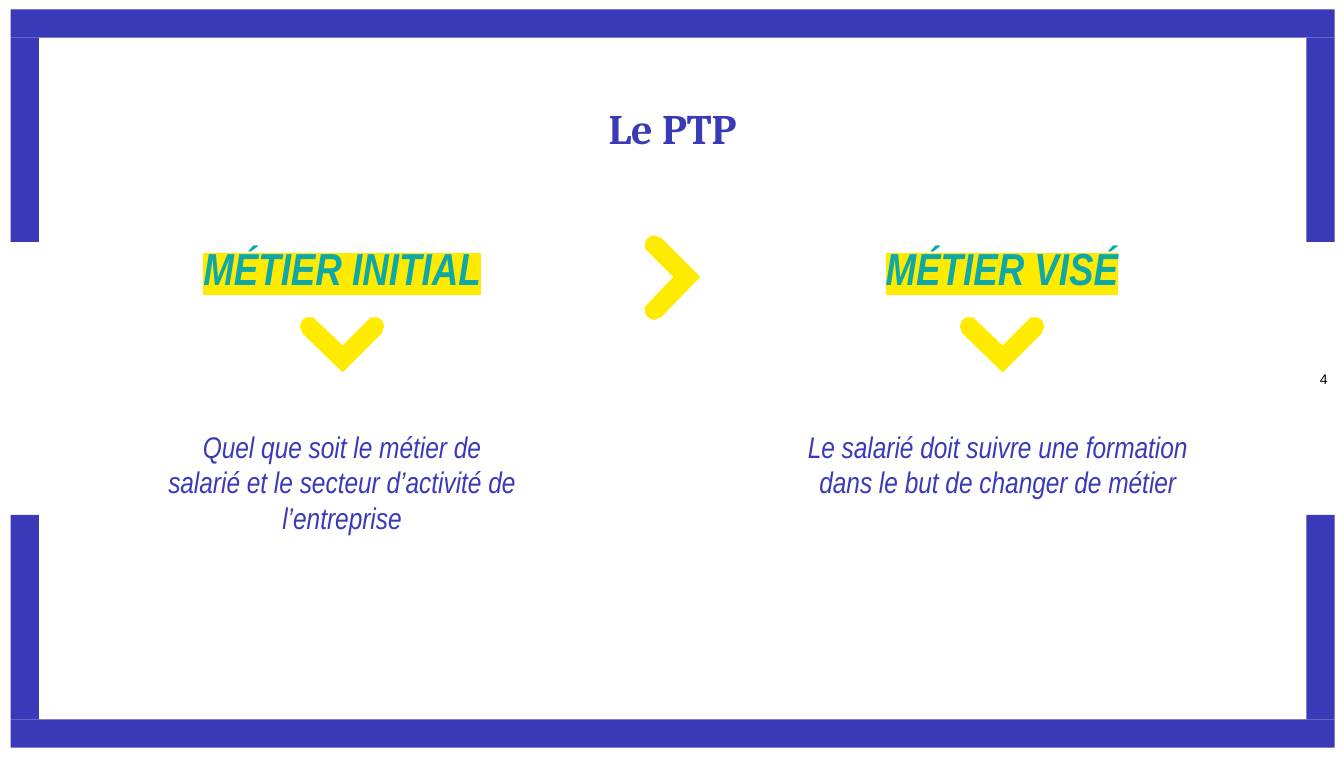
import pptx
import pptx.util
import pptx.dml.color
import pptx.enum.shapes
import pptx.enum.text
import pptx.oxml
import pptx.oxml.ns

PX = 9144
COLORS = {"blue": "3A3AB9", "teal": "0DA8A7", "yellow": "FFEB00", "black": "000000"}
UPPER_ARM = [(12, 2), (9, 1), (7, 0), (4, 1), (2, 2), (0, 5), (0, 7), (0, 10), (2, 12)]


def rgb(name):
    return pptx.dml.color.RGBColor.from_string(COLORS[name])


class Deck:
    def __init__(self, width, height):
        self.prs = pptx.Presentation()
        self.prs.slide_width = width * PX
        self.prs.slide_height = height * PX
        self.s = self.prs.slides.add_slide(self.prs.slide_layouts[6])

    def paint(self, sp, color):
        sp.shadow.inherit = False
        sp.fill.solid()
        sp.fill.fore_color.rgb = rgb(color)
        sp.line.fill.background()

    def bar(self, x, y, w, h):
        sp = self.s.shapes.add_shape(
            pptx.enum.shapes.MSO_SHAPE.RECTANGLE, x * PX, y * PX, w * PX, h * PX)
        self.paint(sp, "blue")

    def chevron(self, x, y, rotation=0):
        lower_arm = [(dx, 63 - dy) for dx, dy in reversed(UPPER_ARM)]
        points = UPPER_ARM + [(21, 31)] + lower_arm
        builder = self.s.shapes.build_freeform(x + 41, y + 31, scale=PX)
        builder.add_line_segments([(x + dx, y + dy) for dx, dy in points], close=True)
        sp = builder.convert_to_shape()
        sp.rotation = rotation
        self.paint(sp, "yellow")

    def text(self, text, x, y, w, h, font, size, color, bold=False, italic=False,
             inset=(0, 0), middle=False, spacing=None, highlight=None):
        sp = self.s.shapes.add_textbox(x * PX, y * PX, w * PX, h * PX)
        tf = sp.text_frame
        tf.word_wrap = True
        tf.margin_left = tf.margin_right = inset[0] * PX
        tf.margin_top = tf.margin_bottom = inset[1] * PX
        if middle:
            tf.vertical_anchor = pptx.enum.text.MSO_ANCHOR.MIDDLE
        p = tf.paragraphs[0]
        p.text = text
        p.alignment = pptx.enum.text.PP_ALIGN.CENTER
        if spacing:
            p.line_spacing = pptx.util.Pt(spacing)
        for r in p.runs:
            r.font.name = font
            r.font.size = pptx.util.Pt(size)
            r.font.bold = bold
            r.font.italic = italic
            r.font.color.rgb = rgb(color)
            if highlight:
                mark = pptx.oxml.parse_xml(
                    '<a:highlight %s><a:srgbClr val="%s"/></a:highlight>'
                    % (pptx.oxml.ns.nsdecls("a"), COLORS[highlight]))
                r.font._element.find(pptx.oxml.ns.qn("a:solidFill")).addnext(mark)

    def heading(self, text, x):
        self.text(text, x, 174, 285, 67, "Arial Narrow", 24, "teal", bold=True,
                  italic=True, inset=(10, 5), spacing=29, highlight="yellow")

    def body(self, text, x, w, h):
        self.text(text, x, 314, w, h, "Arial Narrow", 16, "blue", italic=True,
                  inset=(10, 5), spacing=19)


def main():
    deck = Deck(1000, 563)
    for y in (7, 535):
        deck.bar(8, y, 985, 21)
    for x in (8, 972):
        for y in (28, 383):
            deck.bar(x, y, 21, 152)

    deck.text("Le PTP", 29, 76, 943, 39, "Cambria", 22.5, "blue", bold=True)
    deck.text("4", 972, 188, 26, 187, "Arial", 7.5, "black", middle=True)

    for title, x in (("MÉTIER INITIAL", 112), ("MÉTIER VISÉ", 603)):
        deck.heading(title, x)
        deck.chevron(x + 122, 225, rotation=90)
    deck.chevron(480, 175)

    deck.body("Quel que soit le métier de salarié et le secteur d’activité de l’entreprise",
              112, 285, 118)
    deck.body("Le salarié doit suivre une formation\vdans le but de changer de métier",
              558, 369, 64)
    deck.prs.save("out.pptx")


if __name__ == "__main__":
    main()
